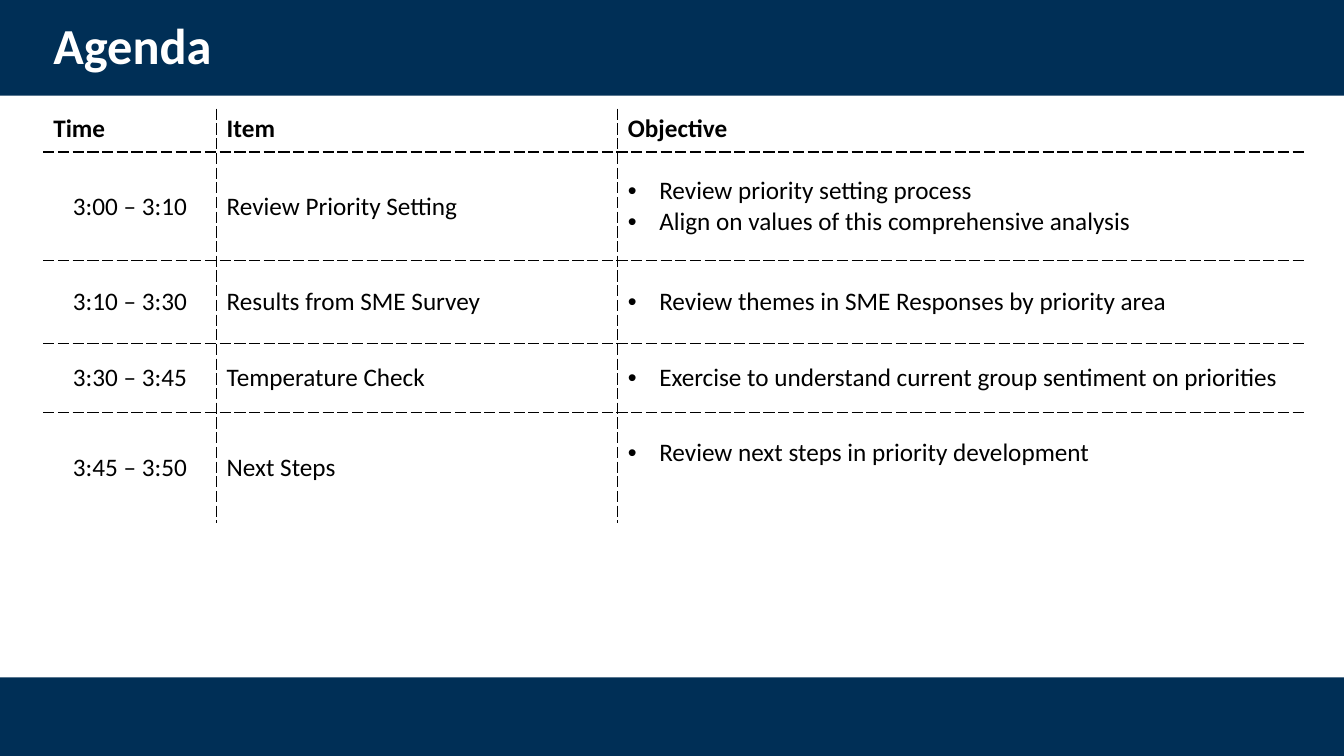
from dataclasses import dataclass

from lxml import etree
from pptx import Presentation
from pptx import util as u
from pptx.dml.color import RGBColor
from pptx.enum import shapes, text
from pptx.oxml import ns


@dataclass(frozen=True)
class Theme:
    """Colours, font and type sizes of the slide."""
    navy: RGBColor = RGBColor(0x00, 0x2F, 0x56)
    white: RGBColor = RGBColor(0xFF, 0xFF, 0xFF)
    black: RGBColor = RGBColor(0x00, 0x00, 0x00)
    font: str = "Calibri"
    title_size: int = 36
    body_size: int = 18


THEME = Theme()
SLIDE_WIDTH, SLIDE_HEIGHT = 33.87, 19.05
COLUMN_WIDTHS = (4.37, 10.11, 17.3)
ROW_HEIGHTS = (1.09, 2.74, 2.08, 1.75, 2.79)
HEADINGS = ("Time", "Item", "Objective")
AGENDA = (
    ("3:00 – 3:10", "Review Priority Setting",
     ("Review priority setting process", "Align on values of this comprehensive analysis")),
    ("3:10 – 3:30", "Results from SME Survey",
     ("Review themes in SME Responses by priority area",)),
    ("3:30 – 3:45", "Temperature Check",
     ("Exercise to understand current group sentiment on priorities",)),
    ("3:45 – 3:50", "Next Steps",
     ("Review next steps in priority development",)),
)


def add_run(paragraph, wording, size, color, bold=False):
    """Add one formatted run to a paragraph."""
    run = paragraph.add_run()
    run.text = wording
    run.font.name = THEME.font
    run.font.size = u.Pt(size)
    run.font.bold = bold
    run.font.color.rgb = color


def add_bar(slide, left, top, width, height):
    """Place a navy band behind everything else."""
    bar = slide.shapes.add_shape(shapes.MSO_SHAPE.RECTANGLE, u.Cm(left), u.Cm(top),
                                 u.Cm(width), u.Cm(height))
    bar.shadow.inherit = False
    bar.fill.solid()
    bar.fill.fore_color.rgb = THEME.navy
    bar.line.fill.background()
    slide.shapes.element.insert(2, bar.element)


def format_title(slide, left, top, width, height):
    """Move the title placeholder into its box and write the title."""
    title = slide.shapes.title
    title.left, title.top = u.Cm(left), u.Cm(top)
    title.width, title.height = u.Cm(width), u.Cm(height)
    frame = title.text_frame
    frame.auto_size = text.MSO_AUTO_SIZE.NONE
    frame.vertical_anchor = text.MSO_ANCHOR.MIDDLE
    paragraph = frame.paragraphs[0]
    paragraph.alignment = text.PP_ALIGN.LEFT
    paragraph.line_spacing = 0.9
    add_run(paragraph, "Agenda", THEME.title_size, THEME.white, bold=True)


def set_borders(cell, dashed_sides):
    """Give a cell dashed lines on the named sides and none elsewhere."""
    properties = cell._tc.get_or_add_tcPr()
    for index, side in enumerate("LRTB"):
        line = etree.Element(ns.qn(f"a:ln{side}"), w=str(u.Pt(1)))
        if side in dashed_sides:
            fill = etree.SubElement(line, ns.qn("a:solidFill"))
            etree.SubElement(fill, ns.qn("a:srgbClr"), val=str(THEME.black))
            etree.SubElement(line, ns.qn("a:prstDash"), val="sysDash")
        else:
            etree.SubElement(line, ns.qn("a:noFill"))
        properties.insert(index, line)


def set_bullet(paragraph):
    """Turn a paragraph into a bullet with a hanging indent."""
    properties = paragraph._p.get_or_add_pPr()
    indent = u.Cm(0.79)
    properties.set("marL", str(indent))
    properties.set("indent", str(-indent))
    color = etree.SubElement(properties, ns.qn("a:buClr"))
    etree.SubElement(color, ns.qn("a:srgbClr"), val=str(THEME.black))
    etree.SubElement(properties, ns.qn("a:buFont"), typeface="Arial")
    etree.SubElement(properties, ns.qn("a:buChar"), char="•")


def fill_cell(cell, lines, heading, column):
    """Write the lines of a cell in the manner of its row and column."""
    cell.fill.solid()
    cell.fill.fore_color.rgb = THEME.white
    cell.vertical_anchor = text.MSO_ANCHOR.TOP if heading else text.MSO_ANCHOR.MIDDLE
    frame = cell.text_frame
    for index, wording in enumerate(lines):
        paragraph = frame.add_paragraph() if index else frame.paragraphs[0]
        if column == 2 and not heading:
            set_bullet(paragraph)
        centred = column == 0 and not heading
        paragraph.alignment = text.PP_ALIGN.CENTER if centred else text.PP_ALIGN.LEFT
        add_run(paragraph, wording, THEME.body_size, THEME.black, bold=heading)


def add_agenda(slide, left, top):
    """Build the agenda table with dashed inner lines."""
    row_count, column_count = len(ROW_HEIGHTS), len(COLUMN_WIDTHS)
    frame = slide.shapes.add_table(row_count, column_count, u.Cm(left), u.Cm(top),
                                   u.Cm(sum(COLUMN_WIDTHS)), u.Cm(sum(ROW_HEIGHTS)))
    table = frame.table
    table.first_row = table.horz_banding = False
    for column, width in zip(table.columns, COLUMN_WIDTHS):
        column.width = u.Cm(width)
    for row, height in zip(table.rows, ROW_HEIGHTS):
        row.height = u.Cm(height)
    for row, contents in enumerate((HEADINGS,) + AGENDA):
        for column, content in enumerate(contents):
            cell = table.cell(row, column)
            lines = (content,) if isinstance(content, str) else content
            fill_cell(cell, lines, row == 0, column)
            inner = {"L": column > 0, "R": column < column_count - 1,
                     "T": row > 0, "B": row < row_count - 1}
            set_borders(cell, [side for side, dashed in inner.items() if dashed])
    table.cell(row_count - 1, column_count - 1).margin_bottom = u.Cm(0.89)


def build_agenda_slide(presentation):
    """Compose the agenda slide."""
    slide = presentation.slides.add_slide(presentation.slide_layouts[5])
    header_height, footer_height = 2.41, 1.98
    add_bar(slide, 0, 0, SLIDE_WIDTH, header_height)
    add_bar(slide, 0, SLIDE_HEIGHT - footer_height, SLIDE_WIDTH, footer_height)
    margin = 1.09
    format_title(slide, margin, 0.28, 29.2, 1.88)
    add_agenda(slide, margin, header_height + 0.33)


def main():
    """Create and save the presentation."""
    presentation = Presentation()
    presentation.slide_width = u.Cm(SLIDE_WIDTH)
    presentation.slide_height = u.Cm(SLIDE_HEIGHT)
    build_agenda_slide(presentation)
    presentation.save("out.pptx")


if __name__ == "__main__":
    main()
